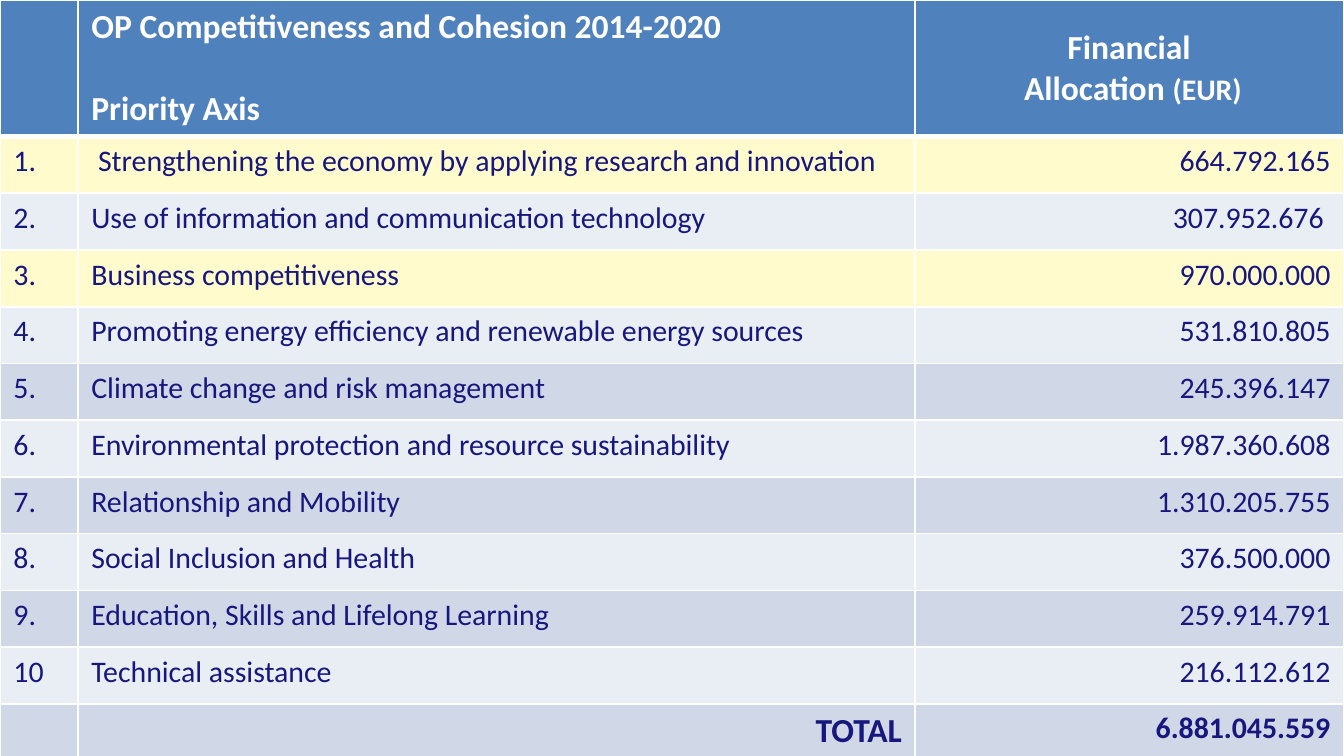
from dataclasses import dataclass

import pptx
import pptx.dml.color
import pptx.enum.text
import pptx.oxml
import pptx.oxml.ns
import pptx.util
from pptx.util import Inches

ALIGN = pptx.enum.text.PP_ALIGN
ANCHOR = pptx.enum.text.MSO_ANCHOR


@dataclass(frozen=True)
class Theme:
    font: str = "Calibri"
    header_fill: str = "4F81BD"
    highlight_fill: str = "FFFBCC"
    light_fill: str = "E9EDF4"
    dark_fill: str = "D0D8E8"
    white: str = "FFFFFF"
    navy: str = "17177D"
    large: int = 18
    normal: int = 16
    thin_line: int = 1
    thick_line: int = 3


THEME = Theme()
SLIDE_WIDTH = Inches(10)
SLIDE_HEIGHT = SLIDE_WIDTH * 9 // 16
INDENT = Inches(0.05)
COLUMN_WIDTHS = (0.58, 6.23, 3.19)
HEADER_HEIGHT = Inches(0.98)
HIGHLIGHTED_AXES = (1, 3)

PRIORITY_AXES = [
    ("1.", "Strengthening the economy by applying research and innovation", "664.792.165"),
    ("2.", "Use of information and communication technology", "307.952.676 "),
    ("3.", "Business competitiveness", "970.000.000"),
    ("4.", "Promoting energy efficiency and renewable energy sources", "531.810.805"),
    ("5.", "Climate change and risk management", "245.396.147"),
    ("6.", "Environmental protection and resource sustainability", "1.987.360.608"),
    ("7.", "Relationship and Mobility", "1.310.205.755"),
    ("8.", "Social Inclusion and Health", "376.500.000"),
    ("9.", "Education, Skills and Lifelong Learning", "259.914.791"),
    ("10", "Technical assistance", "216.112.612"),
]


def add_borders(cell, top, bottom):
    properties = cell._tc.get_or_add_tcPr()
    widths = {"L": THEME.thin_line, "R": THEME.thin_line, "T": top, "B": bottom}
    for side, width in widths.items():
        properties.append(pptx.oxml.parse_xml(
            f'<a:ln{side} {pptx.oxml.ns.nsdecls("a")} w="{pptx.util.Pt(width)}">'
            f'<a:solidFill><a:srgbClr val="{THEME.white}"/></a:solidFill>'
            f'</a:ln{side}>'))


def style_row(row, fill, top=THEME.thin_line, bottom=THEME.thin_line):
    for cell in row.cells:
        add_borders(cell, top, bottom)
        cell.fill.solid()
        cell.fill.fore_color.rgb = pptx.dml.color.RGBColor.from_string(fill)


def add_run(paragraph, text, color=THEME.navy, **font_values):
    run = paragraph.add_run()
    run.text = text
    values = {"name": THEME.font, "size": pptx.util.Pt(THEME.normal), "bold": False}
    for name, value in (values | font_values).items():
        setattr(run.font, name, value)
    run.font.color.rgb = pptx.dml.color.RGBColor.from_string(color)


def indent(paragraph):
    paragraph._p.get_or_add_pPr().set("marL", str(INDENT))


def write_cell(cell, text, align=ALIGN.LEFT, **font_values):
    paragraph = cell.text_frame.paragraphs[0]
    paragraph.alignment = align
    add_run(paragraph, text, **font_values)
    return paragraph


def fill_header(row):
    heading = {"color": THEME.white, "size": pptx.util.Pt(THEME.large), "bold": True}
    style_row(row, THEME.header_fill, bottom=THEME.thick_line)
    _, axis, allocation = row.cells
    for cell in (axis, allocation):
        cell.vertical_anchor = ANCHOR.MIDDLE

    write_cell(axis, "OP Competitiveness and Cohesion 2014-2020", **heading)
    axis_label = axis.text_frame.add_paragraph()
    axis_label.space_before = pptx.util.Pt(22)
    add_run(axis_label, "Priority Axis", **heading)

    indent(write_cell(allocation, "Financial ", ALIGN.CENTER, **heading))
    second_line = allocation.text_frame.add_paragraph()
    second_line.alignment = ALIGN.CENTER
    indent(second_line)
    add_run(second_line, "Allocation ", **heading)
    add_run(second_line, "(EUR)", **(heading | {"size": pptx.util.Pt(THEME.normal)}))


def fill_axis(row, position, entry):
    if position in HIGHLIGHTED_AXES:
        fill = THEME.highlight_fill
    else:
        fill = THEME.dark_fill if position % 2 else THEME.light_fill
    style_row(row, fill, top=THEME.thick_line if position == 1 else THEME.thin_line)
    aligns = (ALIGN.LEFT, ALIGN.LEFT, ALIGN.RIGHT)
    _, axis, _ = [write_cell(*parts) for parts in zip(row.cells, entry, aligns)]
    if position == 1:
        indent(axis)


def fill_total(row):
    style_row(row, THEME.dark_fill)
    _, label, amount = row.cells
    write_cell(label, "TOTAL", ALIGN.RIGHT, size=pptx.util.Pt(THEME.large), bold=True)
    write_cell(amount, "6.881.045.559", ALIGN.RIGHT, bold=True)


def add_allocation_table(slide):
    """Fill the slide: a header, then equal rows that share the rest."""
    row_count = len(PRIORITY_AXES) + 2
    table = slide.shapes.add_table(
        row_count, len(COLUMN_WIDTHS), 0, 0, SLIDE_WIDTH, SLIDE_HEIGHT).table
    for column, width in zip(table.columns, COLUMN_WIDTHS):
        column.width = Inches(width)
    header, *axes, total = table.rows
    header.height = HEADER_HEIGHT
    for row in (*axes, total):
        row.height = (SLIDE_HEIGHT - HEADER_HEIGHT) // (row_count - 1)

    fill_header(header)
    for position, (row, entry) in enumerate(zip(axes, PRIORITY_AXES), start=1):
        fill_axis(row, position, entry)
    fill_total(total)


def main():
    deck = pptx.Presentation()
    deck.slide_width = SLIDE_WIDTH
    deck.slide_height = SLIDE_HEIGHT
    slide = deck.slides.add_slide(deck.slide_layouts[6])
    add_allocation_table(slide)
    deck.save("out.pptx")


if __name__ == "__main__":
    main()
